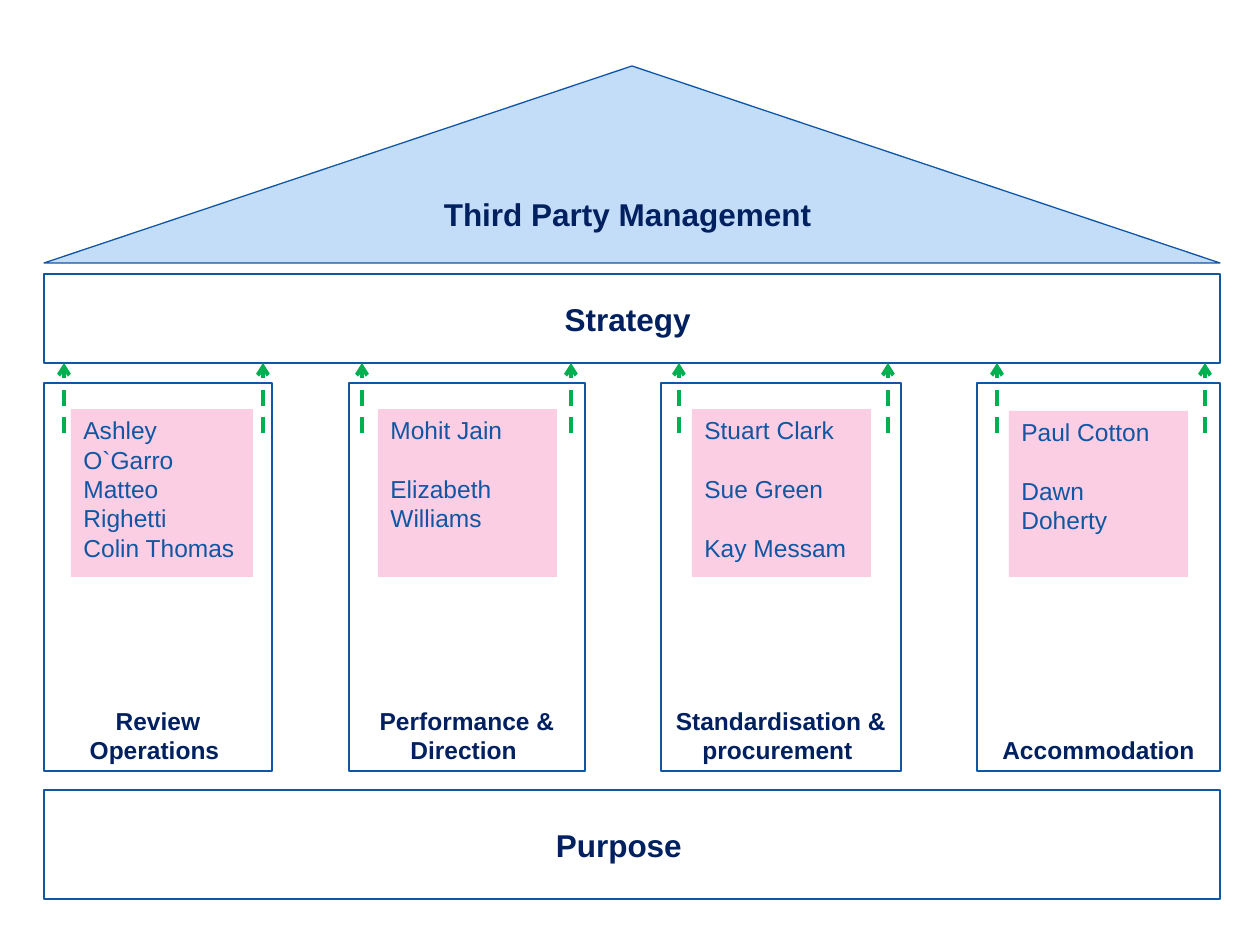
from dataclasses import dataclass
from lxml.etree import SubElement
from pptx import Presentation
from pptx.dml.color import RGBColor
from pptx.enum.dml import MSO_LINE_DASH_STYLE as Dash
from pptx.enum.shapes import MSO_CONNECTOR as Connector, MSO_SHAPE as Shape
from pptx.enum.text import MSO_ANCHOR as Anchor, PP_ALIGN as Align
from pptx.oxml.ns import qn
from pptx.util import Pt

COLORS = {
    "roof": "C3DDF9",
    "white": "FFFFFF",
    "outline": "1056A3",
    "heading": "002060",
    "card": "FBCEE3",
    "arrow": "00B050",
}
LEFT, WIDTH = 44, 1176
PILLAR_TOP, PILLAR_HEIGHT = 383, 388
ARROW_TOP, ARROW_BOTTOM = 363, 433
CARD_BOTTOM = 577

PILLARS = [
    {"label": "Review Operations ", "left": 44, "width": 228,
     "card": (71, 409, 182), "arrows": (64, 263), "gap": 0,
     "names": ["Ashley O`Garro", "Matteo Righetti", "Colin Thomas"]},
    {"label": "Performance & Direction ", "left": 349, "width": 236,
     "card": (378, 409, 179), "arrows": (362, 571), "gap": 16.75,
     "names": ["Mohit Jain", "Elizabeth Williams"]},
    {"label": "Standardisation & procurement ", "left": 661, "width": 240,
     "card": (692, 409, 179), "arrows": (679, 888), "gap": 16.75,
     "names": ["Stuart Clark", "Sue Green", "Kay Messam"]},
    {"label": "Accommodation", "left": 977, "width": 243,
     "card": (1009, 411, 179), "arrows": (997, 1205), "gap": 16.75,
     "names": ["Paul Cotton", "Dawn Doherty"]},
]


def px(length):
    return round(length * 914400 / 126)


def color(name):
    return RGBColor.from_string(COLORS[name])


@dataclass
class HouseSlide:
    slide: object
    font: str = "Arial"
    heading_size: int = 18
    body_size: int = 14

    def box(self, kind, left, top, width, height, fill, outline=True):
        shape = self.slide.shapes.add_shape(kind, px(left), px(top), px(width), px(height))
        shape.shadow.inherit = False
        shape.fill.solid()
        shape.fill.fore_color.rgb = color(fill)
        if outline:
            shape.line.color.rgb = color("outline")
            shape.line.width = Pt(0.75)
        else:
            shape.line.fill.background()
        return shape

    def label(self, shape, lines, size, ink, bold, align, anchor, gap=0):
        frame = shape.text_frame
        frame.word_wrap = True
        frame.vertical_anchor = anchor
        frame.text = "\n".join(lines)
        for index, paragraph in enumerate(frame.paragraphs):
            paragraph.alignment = align
            paragraph.space_before = Pt(gap if index else 0)
            paragraph.font.name = self.font
            paragraph.font.size = Pt(size)
            paragraph.font.bold = bold
            paragraph.font.color.rgb = color(ink)

    def band(self, text, top, height, kind=Shape.RECTANGLE, fill="white"):
        shape = self.box(kind, LEFT, top, WIDTH, height, fill)
        self.label(shape, [text], self.heading_size, "heading", True, Align.CENTER, Anchor.MIDDLE)
        return shape

    def pillar(self, text, left, width):
        shape = self.box(Shape.RECTANGLE, left, PILLAR_TOP, width, PILLAR_HEIGHT, "white")
        self.label(shape, [text], self.body_size, "heading", True, Align.CENTER, Anchor.BOTTOM)

    def card(self, names, left, top, width, gap):
        shape = self.box(Shape.RECTANGLE, left, top, width, CARD_BOTTOM - top, "card", outline=False)
        self.label(shape, names, self.body_size, "outline", False, Align.LEFT, Anchor.TOP, gap)

    def arrow(self, x):
        connector = self.slide.shapes.add_connector(
            Connector.STRAIGHT, px(x), px(ARROW_BOTTOM), px(x), px(ARROW_TOP))
        connector.line.color.rgb = color("arrow")
        connector.line.width = Pt(2.25)
        connector.line.dash_style = Dash.DASH
        properties = connector._element.spPr
        SubElement(properties.find(qn("a:ln")), qn("a:tailEnd"), type="arrow")
        SubElement(properties, qn("a:effectLst"))


def main():
    presentation = Presentation()
    presentation.slide_width = px(1260)
    presentation.slide_height = px(945)
    house = HouseSlide(presentation.slides.add_slide(presentation.slide_layouts[6]))

    house.band("Third Party Management ", 66, 197, Shape.ISOSCELES_TRIANGLE, "roof")
    house.band("Strategy ", 274, 89)
    for pillar in PILLARS:
        house.pillar(pillar["label"], pillar["left"], pillar["width"])
    purpose = house.band("Purpose ", 790, 109)
    purpose.text_frame.margin_right = px(30)
    for pillar in PILLARS:
        house.card(pillar["names"], *pillar["card"], pillar["gap"])
    for pillar in reversed(PILLARS):
        for x in reversed(pillar["arrows"]):
            house.arrow(x)

    presentation.save("out.pptx")


if __name__ == "__main__":
    main()
